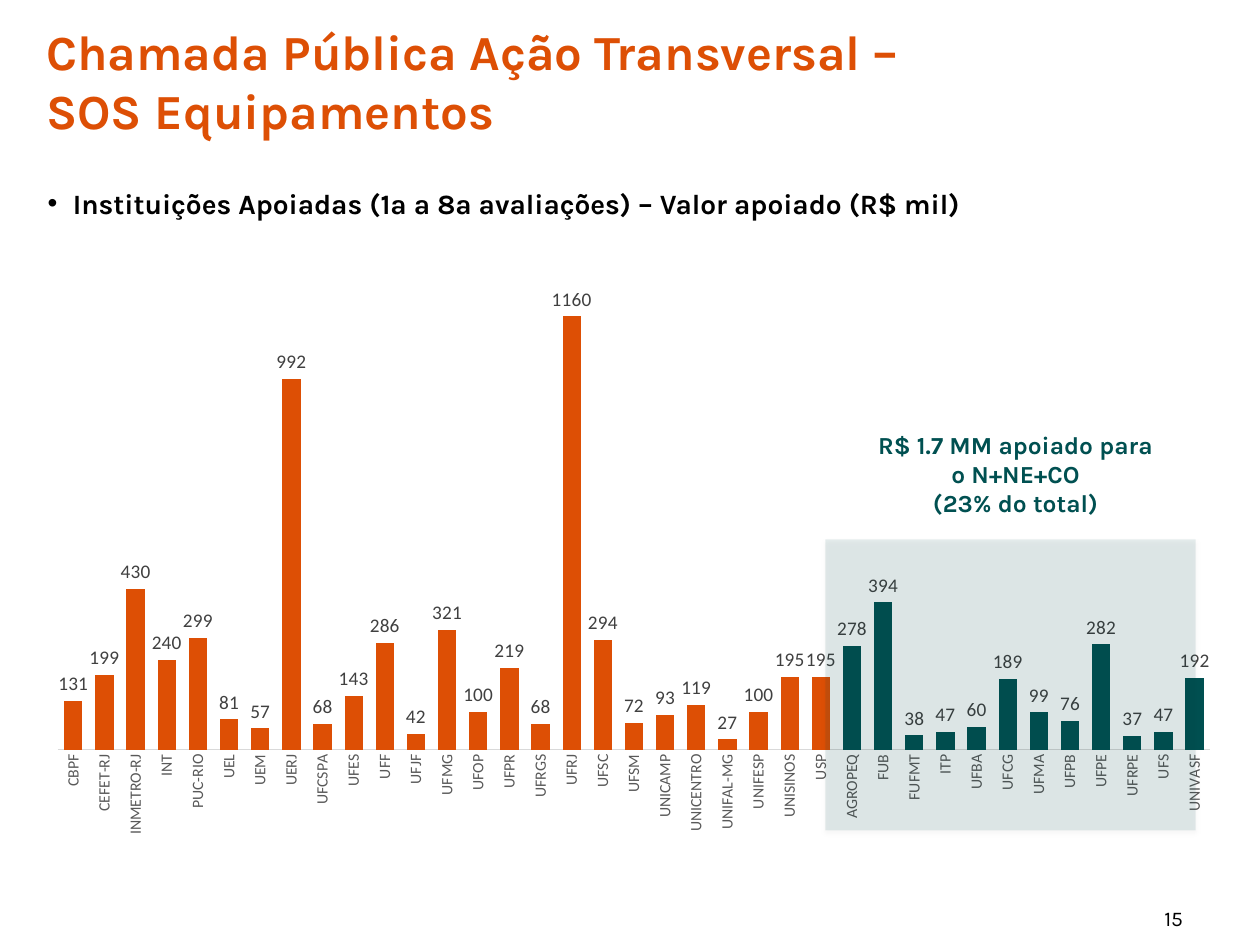
from dataclasses import dataclass

from lxml import etree
from pptx import Presentation
from pptx.chart.data import CategoryChartData
from pptx.dml.color import RGBColor
from pptx.enum.chart import XL_CHART_TYPE, XL_LABEL_POSITION, XL_TICK_MARK
from pptx.enum.shapes import MSO_SHAPE
from pptx.enum.text import MSO_ANCHOR, PP_ALIGN
from pptx.oxml.ns import qn
from pptx.util import Inches, Pt

COLUMNS = XL_CHART_TYPE.COLUMN_CLUSTERED
OUTSIDE_END = XL_LABEL_POSITION.OUTSIDE_END
NO_TICKS = XL_TICK_MARK.NONE
RECTANGLE = MSO_SHAPE.RECTANGLE
TOP, MIDDLE = MSO_ANCHOR.TOP, MSO_ANCHOR.MIDDLE
LEFT, CENTER, JUSTIFY = PP_ALIGN.LEFT, PP_ALIGN.CENTER, PP_ALIGN.JUSTIFY

ORANGE, TEAL, BLACK = "DD4F05", "005051", "000000"

# Supported amounts in thousands of reais
OTHER_REGIONS = {
    "CBPF": 131, "CEFET-RJ": 199, "INMETRO-RJ": 430, "INT": 240, "PUC-RIO": 299,
    "UEL": 81, "UEM": 57, "UERJ": 992, "UFCSPA": 68, "UFES": 143, "UFF": 286,
    "UFJF": 42, "UFMG": 321, "UFOP": 100, "UFPR": 219, "UFRGS": 68, "UFRJ": 1160,
    "UFSC": 294, "UFSM": 72, "UNICAMP": 93, "UNICENTRO": 119, "UNIFAL-MG": 27,
    "UNIFESP": 100, "UNISINOS": 195, "USP": 195,
}
N_NE_CO = {
    "AGROPEQ": 278, "FUB": 394, "FUFMT": 38, "ITP": 47, "UFBA": 60, "UFCG": 189,
    "UFMA": 99, "UFPB": 76, "UFPE": 282, "UFRPE": 37, "UFS": 47, "UNIVASF": 192,
}


@dataclass
class TextBlock:
    box: tuple[float, float, float, float]
    paragraphs: list[str]
    size: float
    color: str
    bold: bool = True
    align: PP_ALIGN = LEFT
    anchor: MSO_ANCHOR = TOP
    wrap: bool = True
    bullet: bool = False


TEXT_BLOCKS = [
    TextBlock((9.07, 7.16, 0.49, 0.26), ["15"], 12, BLACK, bold=False,
              align=CENTER, anchor=MIDDLE, wrap=False),
    TextBlock((0.27, 0.01, 9.73, 1.26),
              ["Chamada Pública Ação Transversal –\vSOS Equipamentos"],
              28, ORANGE, anchor=MIDDLE),
    TextBlock((0.28, 1.28, 9.44, 0.52),
              ["Instituições Apoiadas (1ª a 8ª avaliações) – Valor apoiado (R$ mil)"],
              16, BLACK, align=JUSTIFY, bullet=True),
    TextBlock((6.87, 3.36, 2.38, 0.81),
              ["R$ 1.7 MM apoiado para o N+NE+CO", "(23% do total)"],
              14, TEAL, align=CENTER),
]


def rgb(value: str) -> RGBColor:
    return RGBColor.from_string(value)


def set_font(font, name: str, size: float, color: str, bold: bool = False) -> None:
    for attribute, value in {"name": name, "size": Pt(size), "bold": bold}.items():
        setattr(font, attribute, value)
    font.color.rgb = rgb(color)


def add_xml(parent, tag: str, **attributes):
    return etree.SubElement(parent, qn(tag), attributes)


def add_text(slide, block: TextBlock) -> None:
    frame = slide.shapes.add_textbox(*map(Inches, block.box)).text_frame
    frame.word_wrap = block.wrap
    frame.vertical_anchor = block.anchor
    for index, text in enumerate(block.paragraphs):
        paragraph = frame.add_paragraph() if index else frame.paragraphs[0]
        paragraph.text = text
        paragraph.alignment = block.align
        if block.bullet:
            paragraph.line_spacing = Pt(30)
            properties = paragraph._p.get_or_add_pPr()
            properties.set("marL", str(Inches(0.2)))
            properties.set("indent", str(Inches(-0.2)))
            add_xml(properties, "a:buFont", typeface="Arial")
            add_xml(properties, "a:buChar", char="•")
        for run in paragraph.runs:
            set_font(run.font, "Karla", block.size, block.color, block.bold)


def set_plot_area(chart, **fractions: float) -> None:
    """Fix the inner plot area as fractions of the chart frame."""
    plot_area = chart._chartSpace.chart.plotArea
    for automatic in plot_area.findall(qn("c:layout")):
        plot_area.remove(automatic)
    layout = etree.Element(qn("c:layout"))
    plot_area.insert(0, layout)
    manual = add_xml(layout, "c:manualLayout")
    add_xml(manual, "c:layoutTarget", val="inner")
    for mode in ("xMode", "yMode"):
        add_xml(manual, f"c:{mode}", val="edge")
    for side, fraction in fractions.items():
        add_xml(manual, f"c:{side}", val=str(fraction))


def add_support_chart(slide) -> None:
    amounts = OTHER_REGIONS | N_NE_CO
    data = CategoryChartData()
    data.categories = list(amounts)
    data.add_series("Series 1", [amount * 1000 for amount in amounts.values()])
    frame = map(Inches, (0.27, 1.8, 9.43, 5.32))
    chart = slide.shapes.add_chart(COLUMNS, *frame, data).chart
    chart.has_legend = chart.has_title = False
    set_font(chart.font, "Calibri", 10, BLACK)
    set_plot_area(chart, x=0.02, y=0, w=0.97, h=0.78)

    amount_axis = chart.value_axis
    amount_axis.visible = amount_axis.has_major_gridlines = False
    amount_axis.minimum_scale, amount_axis.maximum_scale = 0, 1400000

    institution_axis = chart.category_axis
    institution_axis.major_tick_mark = NO_TICKS
    set_font(institution_axis.tick_labels.font, "Calibri", 9, "595959")
    institution_axis._element.txPr.bodyPr.set("rot", "-5400000")
    institution_axis.format.line.color.rgb = rgb("D9D9D9")
    institution_axis.format.line.width = Pt(0.75)

    plot = chart.plots[0]
    plot.gap_width = 70
    plot.vary_by_categories = False
    support = plot.series[0]
    support.format.fill.solid()
    support.format.fill.fore_color.rgb = rgb(ORANGE)
    for index in range(len(OTHER_REGIONS), len(amounts)):
        fill = support.points[index].format.fill
        fill.solid()
        fill.fore_color.rgb = rgb(TEAL)

    labels = support.data_labels
    label_format = {"show_value": True, "number_format": "#,",
                    "number_format_is_linked": False, "position": OUTSIDE_END}
    for attribute, value in label_format.items():
        setattr(labels, attribute, value)
    set_font(labels.font, "Calibri", 11, "404040")


def add_region_highlight(slide) -> None:
    frame = map(Inches, (6.55, 4.28, 2.94, 2.31))
    highlight = slide.shapes.add_shape(RECTANGLE, *frame)
    highlight.line.fill.background()
    highlight.fill.solid()
    highlight.fill.fore_color.rgb = rgb(TEAL)
    properties = highlight._element.spPr
    fill_color = properties.find(qn("a:solidFill")).find(qn("a:srgbClr"))
    add_xml(fill_color, "a:alpha", val="10000")

    highlight.shadow.inherit = False
    shadow = add_xml(properties.find(qn("a:effectLst")), "a:outerShdw",
                     blurRad=str(Pt(3.1)), dist=str(Pt(1.8)),
                     dir="5400000", rotWithShape="0")
    shadow_color = add_xml(shadow, "a:srgbClr", val=BLACK)
    add_xml(shadow_color, "a:alpha", val="35000")


def main() -> None:
    presentation = Presentation()
    presentation.slide_width, presentation.slide_height = Inches(10), Inches(7.5)
    slide = presentation.slides.add_slide(presentation.slide_layouts[6])
    add_support_chart(slide)
    add_region_highlight(slide)
    for block in TEXT_BLOCKS:
        add_text(slide, block)
    presentation.save("out.pptx")


if __name__ == "__main__":
    main()
